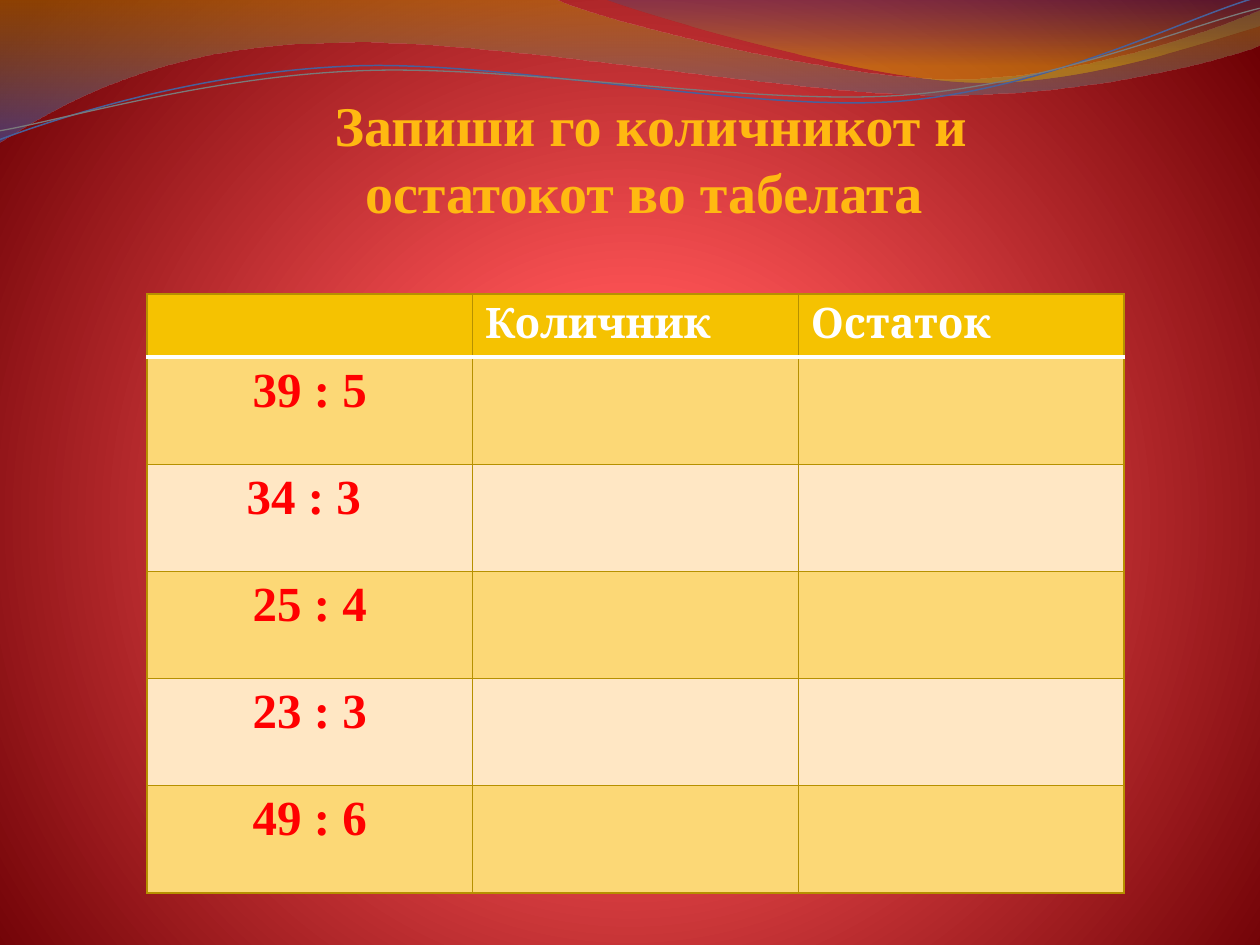
from lxml.etree import SubElement
from pptx import Presentation
from pptx.dml.color import RGBColor
from pptx.enum.text import PP_ALIGN as Align
from pptx.oxml.ns import qn
from pptx.util import Emu, Pt

SCALE = 914400 / 126
WIDTH, HEIGHT = 1260, 945

GOLD = RGBColor(0xF5, 0xC2, 0x01)
BAND = RGBColor(0xFC, 0xD8, 0x76)
CREAM = RGBColor(0xFF, 0xE7, 0xC4)
DARK_GOLD = RGBColor(0xB6, 0x90, 0x00)
WHITE = RGBColor(0xFF, 0xFF, 0xFF)
RED = RGBColor(0xFF, 0x00, 0x00)
AMBER = RGBColor(0xFF, 0xB9, 0x11)
BLUE = RGBColor(0x48, 0x60, 0x9B)
GRAY = RGBColor(0x7A, 0x7A, 0x7A)

TITLE = "Запиши го количникот и остатокот во табелата "
HEADER = ("", "Количник", "Остаток")
DIVISIONS = ("39 : 5", "34 : 3 ", "25 : 4", "23 : 3", "49 : 6")

TITLE_BOX = (215, 84, 872, 149)
TABLE_BOX = (147, 294, 977, 599)
HEADER_HEIGHT = 63

# Gradient stops: position in percent, colour, opacity in percent
BACKGROUND = ((0, "FF5E60", 100), (25, "FF5456", 100), (100, "6D0004", 100))

# Path steps: two numbers draw a straight line, six a Bezier curve
WAVES = (
    (((0, 0), (554, -1), (600, 21, 837, 79, 955, 79), (1075, 79, 1207, 33, 1260, 11),
      (1261, 45), (1239, 55, 1096, 96, 940, 95), (784, 95, 481, 35, 324, 43),
      (163, 45, 58, 105, -1, 142)),
     ((0, "B69000", 45), (100, "3359B7", 55))),
    (((604, -1), (641, 14, 859, 78, 969, 82), (1079, 87, 1211, 40, 1260, 26), (1260, 0)),
     ((0, "324C8D", 30), (80, "D9AC00", 45))),
)
STRANDS = (
    (((-3, 110), (59, 90, 199, 52, 350, 53), (499, 53, 745, 118, 896, 114),
      (1049, 109, 1184, 45, 1260, 27)), BLUE, 0.85),
    (((-2, 101), (57, 94, 207, 57, 357, 58), (509, 58, 750, 112, 902, 108),
      (1052, 104, 1188, 52, 1262, 38)), GRAY, 0.75),
)
STRAND_ROTATION = 357.3


def px(length):
    return Emu(round(length * SCALE))


def add_path(page, path, close):
    """Build a freeform through the path's end points, then bend its curved steps."""
    ends = [(px(step[-2]), px(step[-1])) for step in path]
    builder = page.shapes.build_freeform(*ends[0])
    builder.add_line_segments(ends[1:], close=close)
    shape = builder.convert_to_shape()
    shape.shadow.inherit = False
    segments = list(shape.element.iter(qn("a:lnTo")))
    for segment, step in zip(segments, path[1:]):
        if len(step) == 6:
            curve = SubElement(segment.getparent(), qn("a:cubicBezTo"))
            for x, y in zip(step[::2], step[1::2]):
                SubElement(curve, qn("a:pt"), x=str(px(x) - shape.left),
                           y=str(px(y) - shape.top))
            segment.getparent().replace(segment, curve)
    return shape


def set_gradient(owner, stops, focus=None):
    """Fill with a top-down gradient, or a circular one when focus is given."""
    owner_fill = owner.background.fill if focus else owner.fill
    owner_fill.gradient()
    gradient = owner.element.find(".//" + qn("a:gradFill"))
    for child in list(gradient):
        gradient.remove(child)
    stop_list = SubElement(gradient, qn("a:gsLst"))
    for position, colour, opacity in stops:
        stop = SubElement(stop_list, qn("a:gs"), pos=str(position * 1000))
        value = SubElement(stop, qn("a:srgbClr"), val=colour)
        if opacity < 100:
            SubElement(value, qn("a:alpha"), val=str(opacity * 1000))
    if focus:
        circle = SubElement(gradient, qn("a:path"), path="circle")
        SubElement(circle, qn("a:fillToRect"),
                   {side: str(share * 1000) for side, share in zip("ltrb", focus)})
    else:
        SubElement(gradient, qn("a:lin"), ang="5400000", scaled="1")


def write(frame, text, *, size, font, colour, align=Align.LEFT):
    frame.word_wrap = True
    para = frame.paragraphs[0]
    para.alignment = align
    span = para.add_run()
    span.text = text
    span.font.size = Pt(size)
    span.font.name = font
    span.font.bold = True
    span.font.color.rgb = colour


def set_border(cell, side, colour, width):
    line = SubElement(cell._tc.get_or_add_tcPr(), qn("a:ln" + side), w=str(Pt(width)))
    solid = SubElement(line, qn("a:solidFill"))
    SubElement(solid, qn("a:srgbClr"), val=str(colour))


def style_cell(cell, fill, top, bottom):
    thin = (DARK_GOLD, 0.75)
    for side, border in (("L", thin), ("R", thin), ("T", top), ("B", bottom)):
        set_border(cell, side, *border)
    cell.fill.solid()
    cell.fill.fore_color.rgb = fill


def add_division_table(page):
    rows, columns = len(DIVISIONS) + 1, len(HEADER)
    table = page.shapes.add_table(rows, columns, *map(px, TABLE_BOX)).table
    table.first_row = table.horz_banding = False
    width, height = TABLE_BOX[2:]
    row_height = (height - HEADER_HEIGHT) / len(DIVISIONS)
    for column in table.columns:
        column.width = px(width / columns)
    thin, rule = (DARK_GOLD, 0.75), (WHITE, 2)
    for r, row in enumerate(table.rows):
        row.height = px(row_height if r else HEADER_HEIGHT)
        fill = (BAND if r % 2 else CREAM) if r else GOLD
        for cell in row.cells:
            style_cell(cell, fill, rule if r == 1 else thin, thin if r else rule)
    for c, label in enumerate(HEADER):
        if label:
            write(table.cell(0, c).text_frame, label, size=24, font="Cambria", colour=WHITE)
    for r, division in enumerate(DIVISIONS, 1):
        write(table.cell(r, 0).text_frame, division, size=28, font="Times New Roman",
              colour=RED, align=Align.CENTER)


def main():
    deck = Presentation()
    deck.slide_width, deck.slide_height = px(WIDTH), px(HEIGHT)
    page = deck.slides.add_slide(deck.slide_layouts[6])
    set_gradient(page, BACKGROUND, focus=(10, 110, 10, 100))
    for path, stops in WAVES:
        wave = add_path(page, path, close=True)
        set_gradient(wave, stops)
        wave.line.fill.background()
    for path, colour, width in STRANDS:
        strand = add_path(page, path, close=False)
        strand.rotation = STRAND_ROTATION
        strand.fill.background()
        strand.line.color.rgb = colour
        strand.line.width = Pt(width)
    add_division_table(page)
    box = page.shapes.add_textbox(*map(px, TITLE_BOX))
    write(box.text_frame, TITLE, size=32, font="Times New Roman", colour=AMBER,
          align=Align.CENTER)
    deck.save("out.pptx")


if __name__ == "__main__":
    main()
